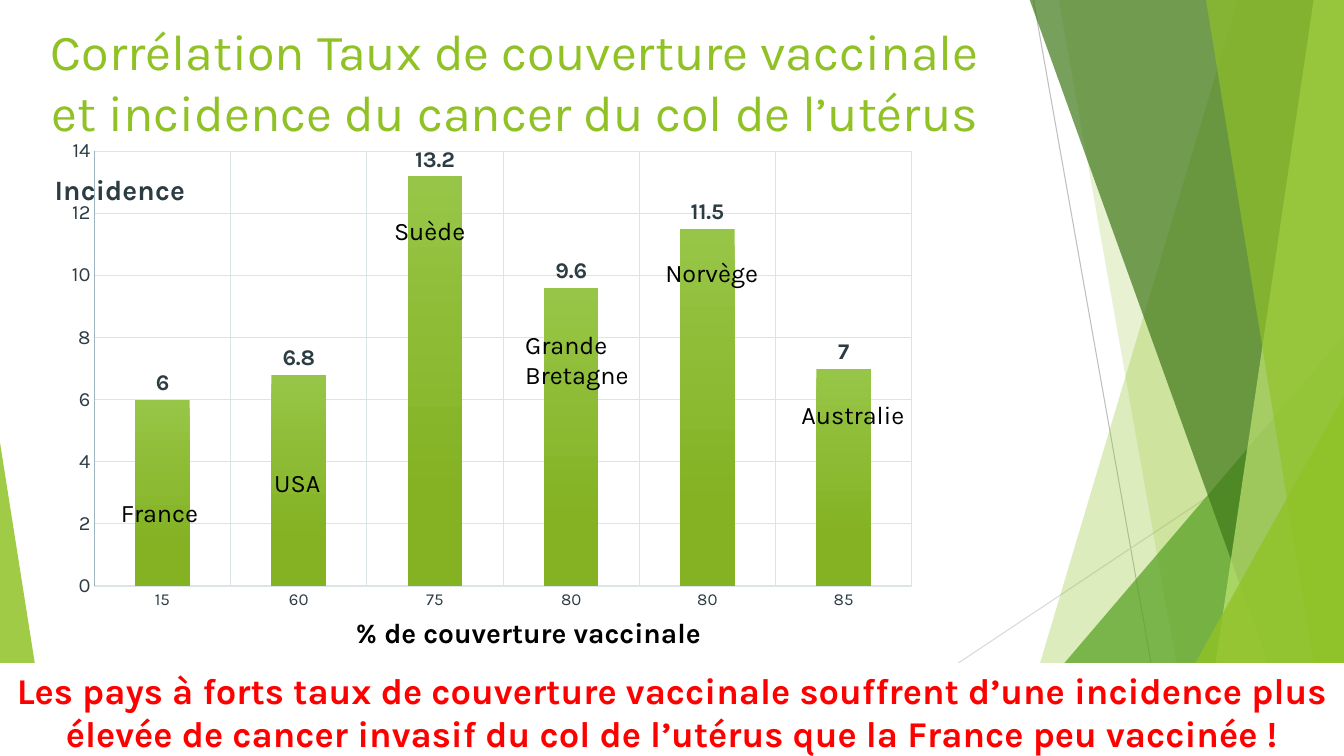
from dataclasses import dataclass

from lxml import etree
from pptx import Presentation, util as u
from pptx.chart.data import CategoryChartData
from pptx.dml.color import RGBColor
from pptx.enum import chart as ch, shapes, text
from pptx.oxml import parse_xml
from pptx.oxml.ns import nsdecls, qn

FONT = "Karla"
GREEN = "90C226"
SLATE = "2C3C43"
GRID = "DBE4E7"
TOP, BOTTOM, RIGHT = -0.01, 7.5, 13.33


@dataclass
class Ray:
    start: tuple[float, float]
    end: tuple[float, float]
    color: str


@dataclass
class Band:
    """Facet running down to the right edge of the slide."""
    top_left: float
    bottom_left: float
    color: str
    opacity: int


@dataclass
class Wedge:
    left: float
    top: float
    width: float
    apex: float
    color: str
    opacity: int


@dataclass
class Label:
    words: str
    left: float
    top: float
    width: float
    height: float
    size: float = 18
    color: str = "000000"
    bold: bool = False
    centred: bool = False
    anchor: text.MSO_ANCHOR = text.MSO_ANCHOR.TOP
    fill: str | None = None
    before: float = 0


RAYS = [Ray((10.25, 0), (11.58, 7.5), "BFBFBF"), Ray((13.33, 4.03), (8.12, 7.5), "D9D9D9")]
FACETS = [
    Band(12.28, 10.04, GREEN, 30),
    Band(10.5, 11.83, GREEN, 20),
    Wedge(9.77, 3.33, 3.56, 1, "54A021", 72),
    Band(10.21, 12.91, "3F7819", 70),
    Band(13.03, 11.92, "C0E474", 70),
    Band(11.96, 13.18, GREEN, 65),
    Wedge(11.34, 3.93, 1.99, 1, GREEN, 80),
    Wedge(0, 4.39, 0.49, 0, GREEN, 85),
]
HEADINGS = [
    Label("Corrélation Taux de couverture vaccinale et incidence du cancer du col de l’utérus",
          0.18, 0.13, 9.86, 1.32, 36, GREEN, centred=True, anchor=text.MSO_ANCHOR.BOTTOM),
    Label("Les pays à forts taux de couverture vaccinale souffrent d’une incidence plus élevée "
          "de cancer invasif du col de l’utérus que la France peu vaccinée !",
          0, 6.58, 13.33, 0.94, 25.9, "FF0000", bold=True, centred=True, fill="FFFFFF", before=10),
]
CHART_LABELS = [
    Label("France", 1.1, 4.88, 1.15, 0.4),
    Label("USA", 2.62, 4.59, 0.81, 0.4),
    Label("Australie", 7.85, 3.91, 1.37, 0.4),
    Label("Grande Bretagne", 5.11, 3.22, 1.67, 0.71),
    Label("% de couverture vaccinale", 3.43, 6.06, 3.72, 0.44, 20, bold=True, fill="FFFFFF"),
    Label("Norvège", 6.5, 2.5, 1.3, 0.4),
    Label("Suède", 3.81, 2.09, 1.37, 0.4),
]
COVERAGE = ["15", "60", "75", "80", "80", "85"]
INCIDENCE = [6, 6.8, 13.2, 9.6, 11.5, 7]


def rgb(value: str) -> RGBColor:
    return RGBColor.from_string(value)


def style_font(font, size: float, color: str, bold: bool = False) -> None:
    font.name, font.size, font.bold = FONT, u.Pt(size), bold
    font.color.rgb = rgb(color)


def style_line(line, color: str) -> None:
    line.color.rgb = rgb(color)
    line.width = u.Pt(0.75)


def draw_ray(page, ray: Ray) -> None:
    line = page.shapes.add_connector(
        shapes.MSO_CONNECTOR.STRAIGHT, *map(u.Inches, ray.start + ray.end))
    style_line(line.line, ray.color)
    etree.SubElement(line.element.spPr, qn("a:effectLst"))


def draw_facet(page, facet: Band | Wedge) -> None:
    if isinstance(facet, Band):
        corners = [(RIGHT, TOP), (RIGHT, BOTTOM), (facet.bottom_left, BOTTOM)]
        builder = page.shapes.build_freeform(
            u.Inches(facet.top_left), u.Inches(TOP), scale=1.0)
        builder.add_line_segments([(u.Inches(x), u.Inches(y)) for x, y in corners], close=True)
        shape = builder.convert_to_shape()
    else:
        shape = page.shapes.add_shape(
            shapes.MSO_SHAPE.ISOSCELES_TRIANGLE, u.Inches(facet.left), u.Inches(facet.top),
            u.Inches(facet.width), u.Inches(BOTTOM - facet.top))
        shape.adjustments[0] = facet.apex
    shape.shadow.inherit = False
    shape.line.fill.background()
    shape.fill.solid()
    shape.fill.fore_color.rgb = rgb(facet.color)
    color = shape.element.spPr.find(qn("a:solidFill"))[0]
    etree.SubElement(color, qn("a:alpha"), val=str(facet.opacity * 1000))


def draw_label(page, label: Label) -> None:
    box = page.shapes.add_textbox(
        *map(u.Inches, (label.left, label.top, label.width, label.height)))
    if label.fill:
        box.fill.solid()
        box.fill.fore_color.rgb = rgb(label.fill)
    frame = box.text_frame
    frame.word_wrap = True
    frame.vertical_anchor = label.anchor
    para = frame.paragraphs[0]
    para.text = label.words
    para.alignment = text.PP_ALIGN.CENTER if label.centred else text.PP_ALIGN.LEFT
    para.space_before = u.Pt(label.before)
    style_font(para.font, label.size, label.color, label.bold)


def manual_layout(inner: bool, **places: float):
    """Layout element placing a chart part by fractions of the chart."""
    target = '<c:layoutTarget val="inner"/>' if inner else ""
    modes = '<c:xMode val="edge"/><c:yMode val="edge"/>'
    values = "".join(f'<c:{name} val="{value}"/>' for name, value in places.items())
    return parse_xml(f'<c:layout {nsdecls("c")}><c:manualLayout>{target}{modes}{values}'
                     "</c:manualLayout></c:layout>")


def style_axis(axis, size: float, line_color: str) -> None:
    axis.major_tick_mark = axis.minor_tick_mark = ch.XL_TICK_MARK.NONE
    axis.has_major_gridlines = True
    style_line(axis.major_gridlines.format.line, GRID)
    style_line(axis.format.line, line_color)
    style_font(axis.tick_labels.font, size, SLATE)


def draw_chart(page) -> None:
    data = CategoryChartData()
    data.categories = COVERAGE
    data.add_series("Series 1", INCIDENCE)
    chart = page.shapes.add_chart(
        ch.XL_CHART_TYPE.COLUMN_CLUSTERED,
        *map(u.Inches, (0.49, 1.36, 8.91, 4.79)), data).chart
    style_font(chart.font, 10, "000000")
    chart.has_legend = False

    para = chart.chart_title.text_frame.paragraphs[0]
    para.text = "Incidence"
    style_font(para.font, 20, SLATE, True)
    title = chart.chart_title.element
    for layout in title.findall(qn("c:layout")):
        title.remove(layout)
    title.find(qn("c:tx")).addnext(manual_layout(False, x=0.0, y=0.06))
    title.find(qn("c:overlay")).set("val", "1")

    plot_area = chart.element.chart.plotArea
    for layout in plot_area.findall(qn("c:layout")):
        plot_area.remove(layout)
    plot_area.insert(0, manual_layout(True, x=0.05, y=0.03, w=0.91, h=0.9))

    style_axis(chart.category_axis, 12, GRID)
    style_axis(chart.value_axis, 14.4, "9FB6C0")
    chart.value_axis.minimum_scale, chart.value_axis.maximum_scale = 0, 14
    chart.value_axis.major_unit = 2

    plot = chart.plots[0]
    plot.gap_width = 150
    plot.vary_by_categories = False
    fill = plot.series[0].format.fill
    fill.gradient()
    fill.gradient_angle = 270
    for stop, (position, color) in zip(fill.gradient_stops, [(0, "97C547"), (0.78, "84B223")]):
        stop.position = position
        stop.color.rgb = rgb(color)
    plot.has_data_labels = True
    plot.data_labels.show_value = True
    plot.data_labels.position = ch.XL_LABEL_POSITION.OUTSIDE_END
    style_font(plot.data_labels.font, 16, SLATE, True)


def main() -> None:
    deck = Presentation()
    deck.slide_width, deck.slide_height = u.Inches(13.33), u.Inches(7.5)
    page = deck.slides.add_slide(deck.slide_layouts[6])
    for ray in RAYS:
        draw_ray(page, ray)
    for facet in FACETS:
        draw_facet(page, facet)
    for heading in HEADINGS:
        draw_label(page, heading)
    draw_chart(page)
    for label in CHART_LABELS:
        draw_label(page, label)
    deck.save("out.pptx")


if __name__ == "__main__":
    main()
